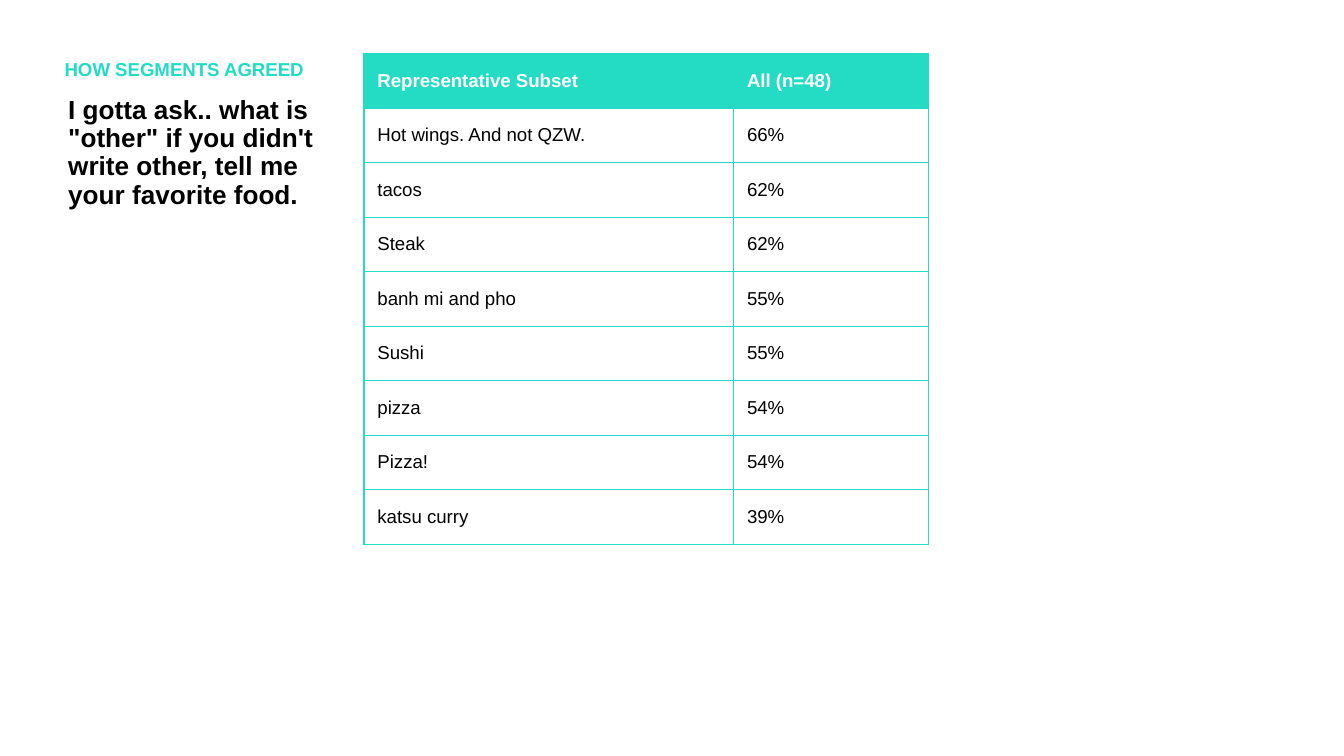
from dataclasses import dataclass
from typing import Any

from lxml.etree import SubElement
from pptx import Presentation
from pptx.dml.color import RGBColor
from pptx.enum.text import MSO_ANCHOR, MSO_AUTO_SIZE, PP_ALIGN
from pptx.oxml.ns import qn
from pptx.util import Pt

TEAL, WHITE, BLACK = "24DBC3", "FFFFFF", "000000"
WIDTHS = (198, 104.4)
HEIGHT = 29.2


@dataclass
class Box:
    left: float
    top: float
    width: float
    height: float


@dataclass
class Row:
    label: str
    share: str
    ink: str = BLACK
    fill: str = WHITE
    bold: bool = False


ROWS = [
    Row("Representative Subset", "All (n=48)", WHITE, TEAL, True),
    Row("Hot wings. And not QZW.", "66%"),
    Row("tacos", "62%"),
    Row("Steak", "62%"),
    Row("banh mi and pho", "55%"),
    Row("Sushi", "55%"),
    Row("pizza", "54%"),
    Row("Pizza!", "54%"),
    Row("katsu curry", "39%"),
]


def paint(target: Any, tint: str) -> None:
    target.rgb = RGBColor.from_string(tint)


def write(frame: Any, text: str, *, size: float = 10, ink: str = BLACK, bold: bool = False) -> Any:
    para = frame.paragraphs[0]
    para.alignment = PP_ALIGN.LEFT
    run = para.add_run()
    run.text = text
    run.font.name = "Arial"
    run.font.size = Pt(size)
    run.font.bold = bold
    paint(run.font.color, ink)
    return para


def place(holder: Any, box: Box, text: str, size: float, ink: str) -> None:
    holder.left, holder.top = Pt(box.left), Pt(box.top)
    holder.width, holder.height = Pt(box.width), Pt(box.height)
    frame = holder.text_frame
    frame.word_wrap = True
    frame.auto_size = MSO_AUTO_SIZE.NONE
    frame.vertical_anchor = MSO_ANCHOR.TOP
    para = write(frame, text, size=size, ink=ink, bold=True)
    para.line_spacing = 0.9
    para.space_before = Pt(10)
    props = para._p.get_or_add_pPr()
    props.set("marL", "0")
    props.set("indent", "0")
    SubElement(props, qn("a:buNone"))


def border(cell: Any, tint: str, weight: float) -> None:
    props = cell._tc.get_or_add_tcPr()
    for side in ("lnL", "lnR", "lnT", "lnB"):
        line = SubElement(props, qn(f"a:{side}"), w=str(Pt(weight)))
        fill = SubElement(line, qn("a:solidFill"))
        SubElement(fill, qn("a:srgbClr"), val=tint)


def draw_table(slide: Any, box: Box, rows: list[Row]) -> None:
    table = slide.shapes.add_table(
        len(rows), len(WIDTHS), Pt(box.left), Pt(box.top), Pt(box.width), Pt(box.height)
    ).table
    for column, width in zip(table.columns, WIDTHS):
        column.width = Pt(width)
    for line, row in zip(table.rows, rows):
        line.height = Pt(HEIGHT)
        for cell, text in zip(line.cells, (row.label, row.share)):
            border(cell, TEAL, 0.75)
            cell.fill.solid()
            paint(cell.fill.fore_color, row.fill)
            cell.vertical_anchor = MSO_ANCHOR.MIDDLE
            write(cell.text_frame, text, ink=row.ink, bold=row.bold)


def main() -> None:
    deck = Presentation()
    deck.slide_width, deck.slide_height = Pt(720), Pt(405)
    slide = deck.slides.add_slide(deck.slide_layouts[1])
    place(slide.shapes.title, Box(27.4, 28.8, 167, 20.2), "HOW SEGMENTS AGREED", 10, TEAL)
    place(
        slide.placeholders[1],
        Box(29.3, 48.2, 165.6, 317.5),
        "I gotta ask.. what is \"other\" if you didn't write other, tell me your favorite food.",
        14,
        BLACK,
    )
    draw_table(slide, Box(195, 28.8, sum(WIDTHS), HEIGHT * len(ROWS)), ROWS)
    deck.save("out.pptx")


if __name__ == "__main__":
    main()
